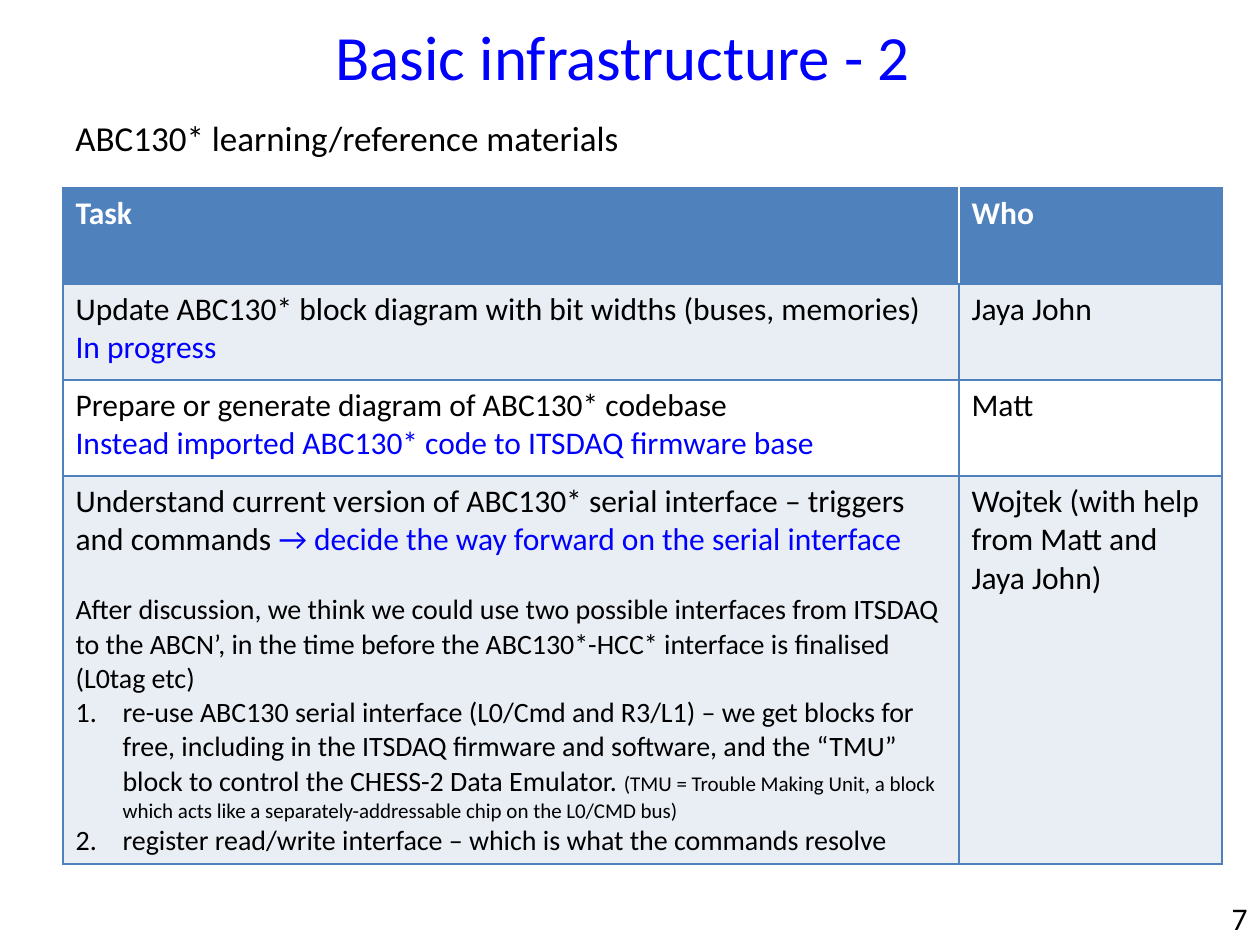
from lxml.etree import SubElement
from pptx import Presentation
from pptx.dml.color import RGBColor
from pptx.enum.text import MSO_ANCHOR as ANCHOR, PP_ALIGN as ALIGN
from pptx.oxml import parse_xml
from pptx.oxml.ns import nsdecls, qn
from pptx.util import Pt

EMU_PER_PX = 914400 / 126
FONT = "Calibri"
BLACK = RGBColor(0, 0, 0)
WHITE = RGBColor(0xFF, 0xFF, 0xFF)
BLUE = RGBColor(0, 0, 0xFF)
STEEL = RGBColor(0x4F, 0x81, 0xBD)
PALE = RGBColor(0xE9, 0xED, 0xF4)


def px(n):
    return round(n * EMU_PER_PX)


def write(p, text, size=18, color=BLACK, bold=False, align=None,
          before=0, after=0, number_indent=0):
    """Add a run to p and apply the paragraph settings that are given."""
    r = p.add_run()
    r.text = text
    r.font.name, r.font.size, r.font.bold = FONT, Pt(size), bold
    r.font.color.rgb = color
    if align is not None:
        p.alignment = align
    if before:
        p.space_before = Pt(before)
    if after:
        p.space_after = Pt(after)
    if number_indent:
        pPr = p._p.get_or_add_pPr()
        pPr.set("marL", str(px(number_indent)))
        pPr.set("indent", str(-px(number_indent)))
        SubElement(pPr, qn("a:buFont"), typeface="+mj-lt")
        SubElement(pPr, qn("a:buAutoNum"), type="arabicPeriod")


def fill_frame(tf, paragraphs):
    """Each paragraph is a list of (text, format) runs."""
    for i, runs in enumerate(paragraphs):
        p = tf.paragraphs[0] if i == 0 else tf.add_paragraph()
        for text, fmt in runs:
            write(p, text, **fmt)


def one(text, **fmt):
    return [(text, fmt)]


class SlideBuilder:
    def __init__(self, prs):
        self.slide = prs.slides.add_slide(prs.slide_layouts[5])

    def title(self, x, y, w, h, text, **fmt):
        s = self.slide.shapes.title
        s.left, s.top, s.width, s.height = map(px, (x, y, w, h))
        s.text_frame.vertical_anchor = ANCHOR.MIDDLE
        write(s.text_frame.paragraphs[0], text, **fmt)

    def text(self, x, y, w, h, text, anchor=ANCHOR.TOP, **fmt):
        tf = self.slide.shapes.add_textbox(*map(px, (x, y, w, h))).text_frame
        tf.word_wrap = True
        tf.vertical_anchor = anchor
        write(tf.paragraphs[0], text, **fmt)

    def borders(self, cell, **colors):
        """Draw 1 pt borders, STEEL unless a side (L, R, T, B) is given."""
        tcPr = cell._tc.get_or_add_tcPr()
        for i, side in enumerate("LRTB"):
            tcPr.insert(i, parse_xml(
                f'<a:ln{side} {nsdecls("a")} w="12700"><a:solidFill>'
                f'<a:srgbClr val="{colors.get(side, STEEL)}"/>'
                f'</a:solidFill></a:ln{side}>'))

    def table(self, x, y, widths, heights, rows):
        frame = self.slide.shapes.add_table(
            len(rows), len(widths), px(x), px(y), px(sum(widths)), px(sum(heights)))
        table = frame.table
        for col, w in zip(table.columns, widths):
            col.width = px(w)
        for row, h in zip(table.rows, heights):
            row.height = px(h)
        for i, row in enumerate(rows):
            for j, paragraphs in enumerate(row):
                cell = table.cell(i, j)
                cell.fill.solid()
                cell.fill.fore_color.rgb = STEEL if i == 0 else PALE if i % 2 else WHITE
                inner = {"R" if j == 0 else "L": WHITE} if i == 0 else {}
                self.borders(cell, **inner)
                fill_frame(cell.text_frame, paragraphs)


def main():
    prs = Presentation()
    prs.slide_width, prs.slide_height = px(1260), px(945)
    s = SlideBuilder(prs)
    s.title(63, 16, 1134, 78, "Basic infrastructure - 2 ",
            size=36, color=BLUE, align=ALIGN.CENTER)
    s.text(1166, 893, 94, 50, "7", anchor=ANCHOR.MIDDLE, align=ALIGN.RIGHT)

    header = {"color": WHITE, "bold": True}
    numbered = {"size": 16, "number_indent": 47}
    serial_task = [
        one("Understand current version of ABC130* serial interface – triggers and commands ")
        + one("→ decide the way forward on the serial interface", color=BLUE),
        one("After discussion, we think we could use two possible interfaces from ITSDAQ "
            "to the ABCN’, in the time before the ABC130*-HCC* interface is finalised "
            "(L0tag etc)", size=16, before=19.5),
        one("re-use ABC130 serial interface (L0/Cmd and R3/L1) – we get blocks for free, "
            "including in the ITSDAQ firmware and software, and the “TMU” block to control "
            "the CHESS-2 Data Emulator. ", **numbered)
        + one("(TMU = Trouble Making Unit, a block which acts like a separately-addressable "
              "chip on the L0/CMD bus)", size=12),
        one("register read/write interface – which is what the commands resolve", **numbered),
    ]
    s.table(63, 188, [896, 263], [96, 96, 96, 388], [
        [[one("Task", **header)], [one("Who", **header)]],
        [[one("Update ABC130* block diagram with bit widths (buses, memories)"),
          one("In progress", color=BLUE)], [one("Jaya John")]],
        [[one("Prepare or generate diagram of ABC130* codebase"),
          one("Instead imported ABC130* code to ITSDAQ firmware base", color=BLUE)],
         [one("Matt")]],
        [serial_task, [one("Wojtek (with help from Matt and Jaya John)")]],
    ])
    s.text(63, 110, 1212, 55, "ABC130* learning/reference materials", size=20, after=6)
    prs.save("out.pptx")


if __name__ == "__main__":
    main()
